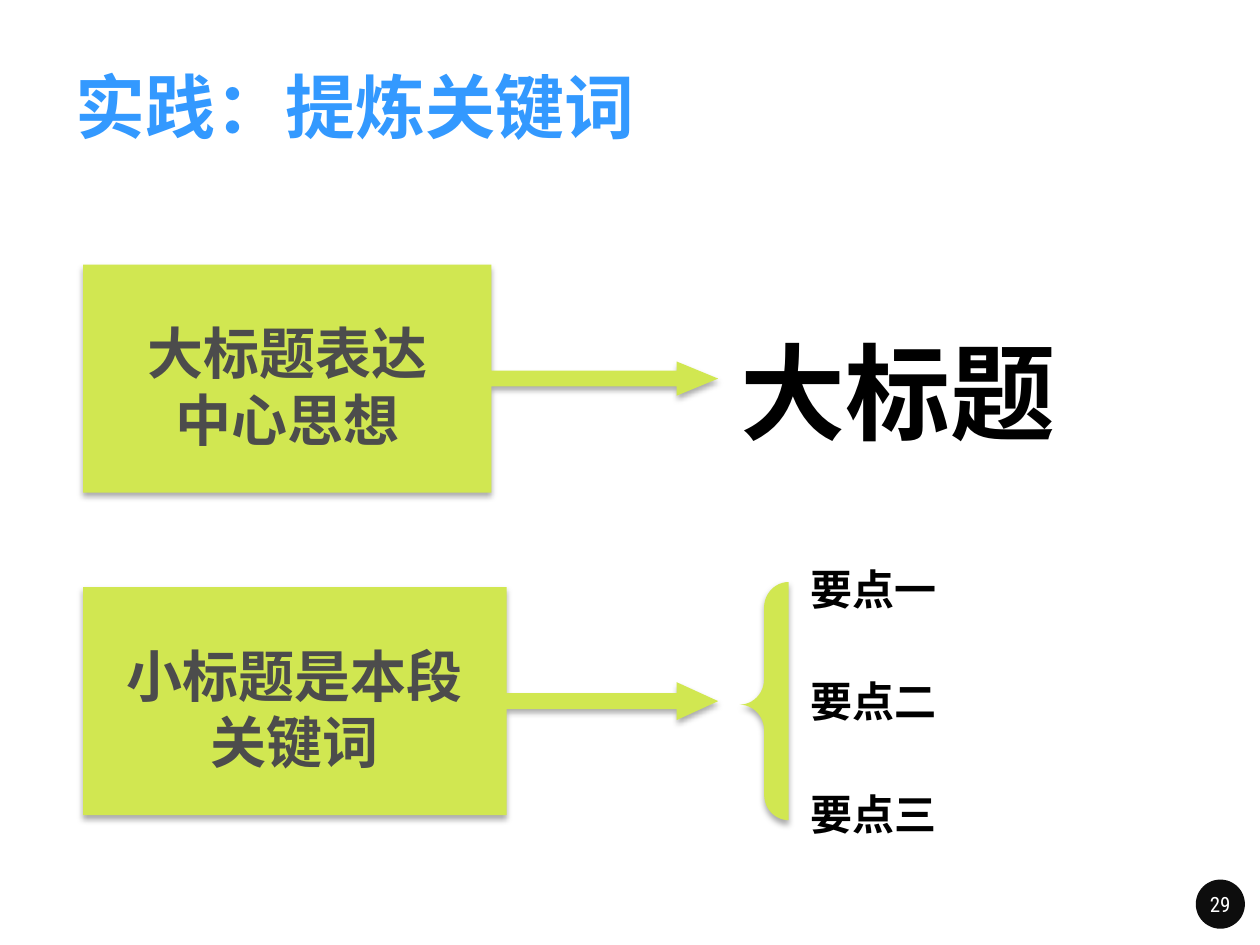
from dataclasses import dataclass

from lxml import etree
from pptx import Presentation
from pptx.dml.color import RGBColor
from pptx.enum import shapes, text
from pptx.oxml import ns
from pptx.util import Pt


@dataclass(frozen=True)
class Theme:
    lime: str = "D1E751"
    blue: str = "3399FF"
    grey: str = "4C4C4C"
    black: str = "000000"
    badge: str = "0D0D0D"
    white: str = "FFFFFF"
    cjk: str = "Noto Sans CJK SC"
    latin: str = "Arial"
    digits: str = "Roboto Condensed"
    title_size: int = 40
    heading_size: int = 60
    callout_size: int = 32
    point_size: int = 24
    number_size: int = 12


THEME = Theme()


def add_filled(slide, preset, box, color):
    shape = slide.shapes.add_shape(preset, *map(Pt, box))
    shape.shadow.inherit = False
    shape.fill.solid()
    shape.fill.fore_color.rgb = RGBColor.from_string(color)
    shape.line.fill.background()
    return shape


def cast_shadow(shape):
    """Give the shape a soft shadow straight below it."""
    effects = shape._element.spPr.find(ns.qn("a:effectLst"))
    shadow = etree.SubElement(
        effects, ns.qn("a:outerShdw"), blurRad=str(Pt(3.5)),
        dist=str(Pt(2.2)), dir="5400000", rotWithShape="0")
    color = etree.SubElement(shadow, ns.qn("a:srgbClr"), val=THEME.black)
    etree.SubElement(color, ns.qn("a:alpha"), val="32000")


def style(paragraph, size, color, font, bold=True, line=None,
          align=text.PP_ALIGN.LEFT):
    paragraph.alignment = align
    if line:
        paragraph.line_spacing = Pt(line)
    for run in paragraph.runs:
        run.font.size = Pt(size)
        run.font.bold = bold
        run.font.name = font
        run.font.color.rgb = RGBColor.from_string(color)
        east_asian = etree.Element(ns.qn("a:ea"), typeface=THEME.cjk)
        run.font._element.find(ns.qn("a:latin")).addnext(east_asian)


def add_title(slide, box, wording):
    frame = slide.shapes.add_textbox(*map(Pt, box)).text_frame
    frame.word_wrap = True
    frame.vertical_anchor = text.MSO_ANCHOR.MIDDLE
    frame.text = wording
    style(frame.paragraphs[0], THEME.title_size, THEME.blue, THEME.cjk, line=53)


def add_outline_panel(slide, box, heading, points):
    """White panel with a large heading above indented points."""
    panel = add_filled(slide, shapes.MSO_SHAPE.RECTANGLE, box, THEME.white)
    frame = panel.text_frame
    frame.word_wrap = True
    frame.vertical_anchor = text.MSO_ANCHOR.TOP
    frame.text = "\n".join([heading, *points])
    head, *items = frame.paragraphs
    style(head, THEME.heading_size, THEME.black, THEME.cjk, line=76.4)
    head.space_after = Pt(27)
    for item in items:
        style(item, THEME.point_size, THEME.black, THEME.cjk, line=64.4)
        item._p.get_or_add_pPr().set("marL", str(Pt(40)))


def add_callout(slide, box, wording, head_width, body_share):
    callout = add_filled(
        slide, shapes.MSO_SHAPE.RIGHT_ARROW_CALLOUT, box, THEME.lime)
    for i, value in enumerate((0.069, head_width, 0.182, body_share)):
        callout.adjustments[i] = value
    cast_shadow(callout)
    frame = callout.text_frame
    frame.word_wrap = False
    frame.vertical_anchor = text.MSO_ANCHOR.MIDDLE
    frame.margin_top = Pt(11.6)
    frame.text = wording
    for paragraph in frame.paragraphs:
        style(paragraph, THEME.callout_size, THEME.grey, THEME.latin,
              line=38, align=text.PP_ALIGN.CENTER)


def add_brace(slide, box):
    brace = add_filled(slide, shapes.MSO_SHAPE.LEFT_BRACE, box, THEME.lime)
    brace.adjustments[0] = 0.519
    brace.adjustments[1] = 0.515
    cast_shadow(brace)


def add_page_number(slide, box, number):
    badge = add_filled(slide, shapes.MSO_SHAPE.OVAL, box, THEME.badge)
    frame = badge.text_frame
    frame.margin_left = frame.margin_right = Pt(2.88)
    frame.margin_top = frame.margin_bottom = Pt(2.88)
    frame.word_wrap = False
    frame.vertical_anchor = text.MSO_ANCHOR.MIDDLE
    frame.text = number
    style(frame.paragraphs[0], THEME.number_size, THEME.white, THEME.digits,
          bold=False, align=text.PP_ALIGN.CENTER)


def main():
    deck = Presentation()
    deck.slide_width, deck.slide_height = Pt(720), Pt(540)
    slide = deck.slides.add_slide(deck.slide_layouts[6])

    add_page_number(slide, (683.3, 502.6, 28.1, 28.1), "29")
    add_outline_panel(slide, (416.2, 179.3, 295.2, 319.7), "大标题",
                      ["要点一", "要点二", "要点三"])
    callouts = [
        (151.2, "大标题表达\n中心思想", 0.075, 0.643),
        (335.5, "小标题是本段\n关键词", 0.083, 0.667),
    ]
    for top, wording, head_width, body_share in callouts:
        add_callout(slide, (47.5, top, 362.9, 130.3), wording,
                    head_width, body_share)
    add_brace(slide, (422.6, 332.6, 28.1, 136.1))
    add_title(slide, (36, 26.6, 647.3, 62.6), "实践：提炼关键词")
    deck.save("out.pptx")


if __name__ == "__main__":
    main()
